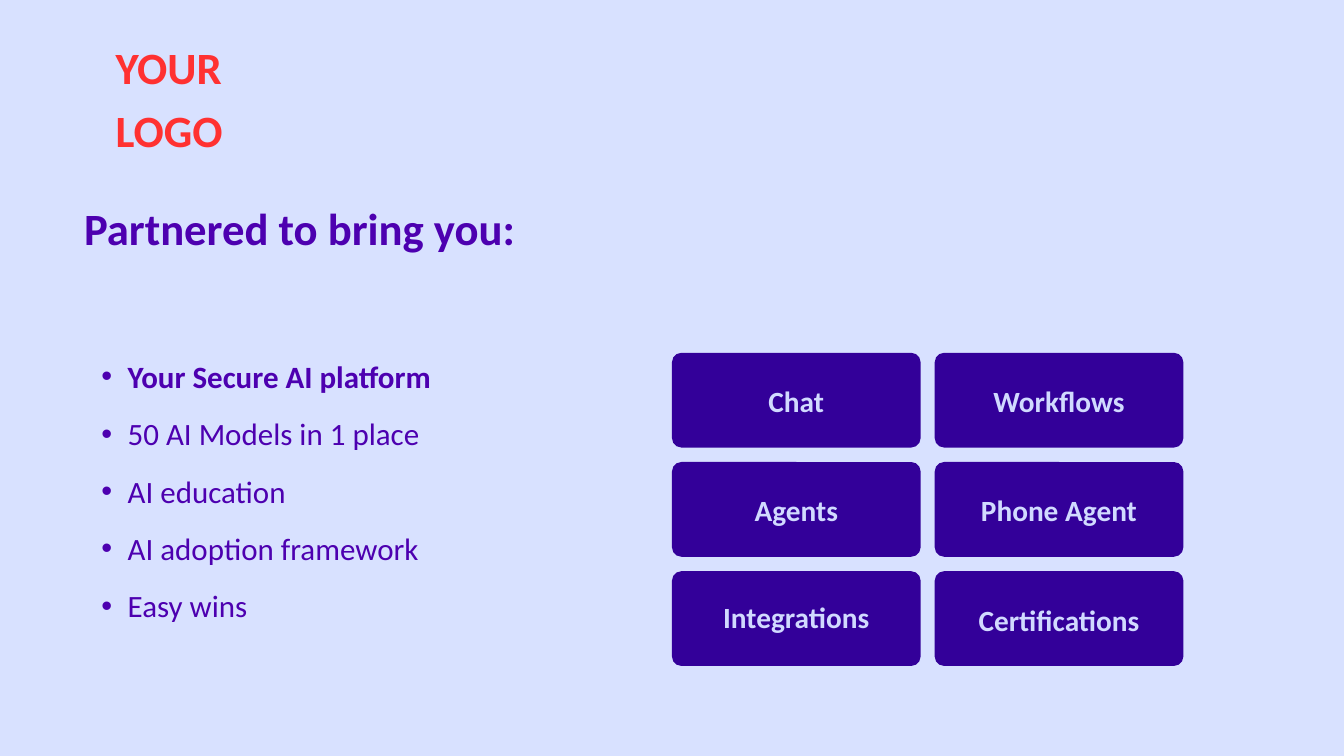
from pptx import Presentation
from pptx.dml.color import RGBColor as RGB
from pptx.enum.shapes import MSO_SHAPE as Shape
from pptx.enum.text import MSO_ANCHOR as Anchor, MSO_AUTO_SIZE as Auto, PP_ALIGN as Align
from pptx.util import Inches, Pt

PALE = RGB(0xD8, 0xE1, 0xFF)
LILAC = RGB(0xD1, 0xDA, 0xFF)
INDIGO = RGB(0x33, 0x00, 0x99)
PURPLE = RGB(0x4D, 0x00, 0xB0)
RED = RGB(0xFF, 0x31, 0x31)

TITLE = "Partnered to bring you:"
LOGO = "YOUR LOGO"
POINTS = [
    "Your Secure AI platform",
    "50 AI Models in 1 place",
    "AI education",
    "AI adoption framework",
    "Easy wins",
]
CARDS = [
    ("Chat", 0.06), ("Workflows", 0.06),
    ("Agents", 0.06), ("Phone Agent", 0.06),
    ("Integrations", 0.14), ("Certifications", 0.06),
]
COLS = 2
LEFT, TOP = 10, 5.25
WIDE, HIGH = 3.7, 1.41
STEP_X, STEP_Y = 3.91, 1.625
CURVE = 0.14

HEAD = {"size": Pt(47.9), "bold": True}
LIST = {"size": Pt(33.2), "bold": False}
CARD = {"size": Pt(31.4), "bold": True}


def place(shape, left, top, width, height):
    shape.left, shape.top = Inches(left), Inches(top)
    shape.width, shape.height = Inches(width), Inches(height)


def write(shape, lines, look, color, pitch, align=Align.LEFT, anchor=Anchor.TOP, lift=0):
    frame = shape.text_frame
    frame.text = "\n".join(lines)
    settings = {
        "word_wrap": True, "auto_size": Auto.NONE, "vertical_anchor": anchor,
        "margin_left": 0, "margin_right": 0, "margin_top": 0,
        "margin_bottom": Inches(lift),
    }
    for name, value in settings.items():
        setattr(frame, name, value)
    for para in frame.paragraphs:
        para.alignment = align
        para.line_spacing = Pt(pitch)
        para.space_before = para.space_after = Pt(0)
        for run in para.runs:
            font = run.font
            font.name = "Calibri"
            font.color.rgb = color
            for name, value in look.items():
                setattr(font, name, value)
    return frame


deck = Presentation()
deck.slide_width, deck.slide_height = Inches(20), Inches(11.25)
slide = deck.slides.add_slide(deck.slide_layouts[1])
slide.background.fill.solid()
slide.background.fill.fore_color.rgb = PALE

for i, (label, lift) in enumerate(CARDS):
    row, col = divmod(i, COLS)
    card = slide.shapes.add_shape(Shape.ROUNDED_RECTANGLE, 0, 0, 0, 0)
    place(card, LEFT + col * STEP_X, TOP + row * STEP_Y, WIDE, HIGH)
    card.adjustments[0] = CURVE / HIGH
    card.shadow.inherit = False
    card.fill.solid()
    card.fill.fore_color.rgb = INDIGO
    card.line.fill.background()
    write(card, [label], CARD, LILAC, 43.9, Align.CENTER, Anchor.MIDDLE, lift)

body = slide.placeholders[1]
place(body, 1.12, 5.02, 8.37, 4.15)
frame = write(body, POINTS, LIST, PURPLE, 61.4)
frame.paragraphs[0].runs[0].font.bold = True
for para in frame.paragraphs:
    props = para._p.get_or_add_pPr()
    props.set("marL", str(Inches(0.78)))
    props.set("indent", str(Inches(-0.39)))

title = slide.shapes.title
place(title, 1.25, 2.86, 7.68, 0.91)
write(title, [TITLE], HEAD, PURPLE, 67.1)

logo = slide.shapes.add_textbox(0, 0, 0, 0)
place(logo, 1.72, 0.46, 2.31, 1.84)
write(logo, [LOGO], HEAD, RED, 67.1)

deck.save("out.pptx")
